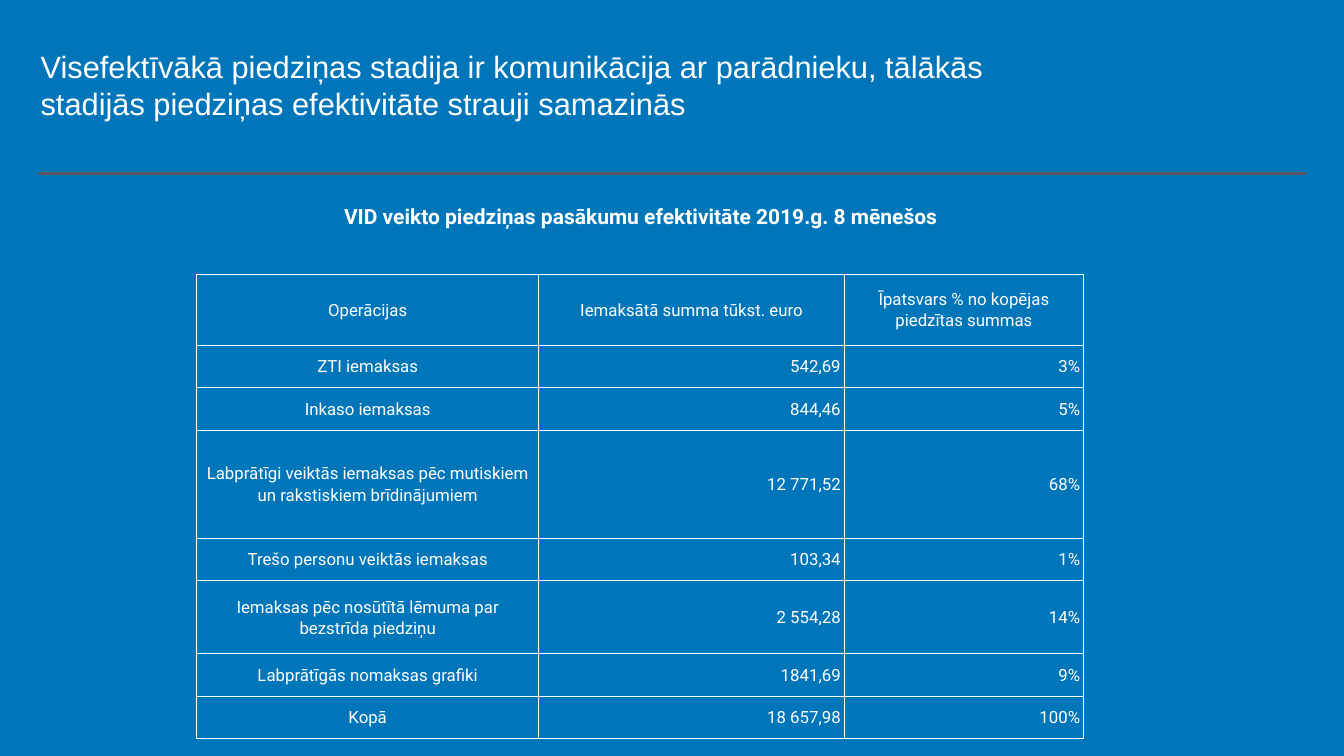
from dataclasses import dataclass

from lxml import etree
from pptx import Presentation
from pptx.dml.color import RGBColor
from pptx.enum.shapes import MSO_CONNECTOR
from pptx.enum.text import MSO_ANCHOR, PP_ALIGN
from pptx.oxml.ns import qn
from pptx.util import Pt

LEFT, CENTER, RIGHT = PP_ALIGN.LEFT, PP_ALIGN.CENTER, PP_ALIGN.RIGHT
TOP, MIDDLE = MSO_ANCHOR.TOP, MSO_ANCHOR.MIDDLE
STRAIGHT = MSO_CONNECTOR.STRAIGHT


@dataclass(frozen=True)
class Theme:
    background: str = "0076BA"
    text: str = "FFFFFF"
    rule: str = "53585F"
    title_font: str = "Arial"
    body_font: str = "Roboto"
    title_size: float = 44
    heading_size: float = 30
    cell_size: float = 24
    rule_width: float = 4
    border_width: float = 1


@dataclass(frozen=True)
class Label:
    text: str
    left: float
    top: float
    width: float
    height: float
    font: str
    size: float
    bold: bool
    align: PP_ALIGN
    anchor: MSO_ANCHOR


@dataclass(frozen=True)
class Row:
    operation: str
    amount: str
    share: str
    height: float = 60.5


THEME = Theme()

LABELS = [
    Label("Visefektīvākā piedziņas stadija ir komunikācija ar parādnieku, "
          "tālākās stadijās piedziņas efektivitāte strauji samazinās",
          54, 64, 1483, 114.5, THEME.title_font, THEME.title_size, False, LEFT, MIDDLE),
    Label("VID veikto piedziņas pasākumu efektivitāte 2019.g. 8 mēnešos",
          293.8, 287.3, 1243.4, 80.6, THEME.body_font, THEME.heading_size, True, CENTER, TOP),
]

COLUMN_WIDTHS = [488.9, 436.3, 342]
ROWS = [
    Row("Operācijas", "Iemaksātā summa tūkst. euro",
        "Īpatsvars % no kopējas piedzītas summas", 100.8),
    Row("ZTI iemaksas", "542,69", "3%"),
    Row("Inkaso iemaksas", "844,46", "5%"),
    Row("Labprātīgi veiktās iemaksas pēc mutiskiem un rakstiskiem brīdinājumiem",
        "12 771,52", "68%", 154.8),
    Row("Trešo personu veiktās iemaksas", "103,34", "1%"),
    Row("Iemaksas pēc nosūtītā lēmuma par bezstrīda piedziņu", "2 554,28", "14%", 104.4),
    Row("Labprātīgās nomaksas grafiki", "1841,69", "9%"),
    Row("Kopā", "18 657,98", "100%"),
]


def style_paragraph(p, font: str, size: float, bold: bool, align: PP_ALIGN) -> None:
    p.alignment = align
    for r in p.runs:
        r.font.name = font
        r.font.size = Pt(size)
        r.font.bold = bold
        r.font.color.rgb = RGBColor.from_string(THEME.text)


def add_label(s, label: Label) -> None:
    sp = s.shapes.add_textbox(Pt(label.left), Pt(label.top), Pt(label.width), Pt(label.height))
    tf = sp.text_frame
    tf.word_wrap = True
    tf.vertical_anchor = label.anchor
    tf.margin_left = tf.margin_right = tf.margin_top = tf.margin_bottom = Pt(4)
    tf.text = label.text
    style_paragraph(tf.paragraphs[0], label.font, label.size, label.bold, label.align)


def add_rule(s, left: float, right: float, y: float) -> None:
    line = s.shapes.add_connector(STRAIGHT, Pt(left), Pt(y), Pt(right), Pt(y))
    line.line.color.rgb = RGBColor.from_string(THEME.rule)
    line.line.width = Pt(THEME.rule_width)
    etree.SubElement(line._element.spPr, qn("a:effectLst"))


def add_borders(cell) -> None:
    props = cell._tc.get_or_add_tcPr()
    for i, side in enumerate(("a:lnL", "a:lnR", "a:lnT", "a:lnB")):
        border = etree.Element(qn(side), w=str(Pt(THEME.border_width)))
        fill = etree.SubElement(border, qn("a:solidFill"))
        etree.SubElement(fill, qn("a:srgbClr"), val=THEME.text)
        props.insert(i, border)


def fill_cell(cell, text: str, align: PP_ALIGN) -> None:
    cell.fill.background()
    cell.vertical_anchor = MIDDLE
    cell.margin_left = cell.margin_right = Pt(5)
    cell.margin_top = cell.margin_bottom = Pt(0)
    cell.text = text
    p = cell.text_frame.paragraphs[0]
    p.line_spacing = 1.07
    p.space_after = Pt(8)
    style_paragraph(p, THEME.body_font, THEME.cell_size, False, align)
    add_borders(cell)


def add_results_table(s, left: float, top: float) -> None:
    width, height = sum(COLUMN_WIDTHS), sum(row.height for row in ROWS)
    table = s.shapes.add_table(len(ROWS), len(COLUMN_WIDTHS), Pt(left), Pt(top),
                               Pt(width), Pt(height)).table
    table.first_row = table.horz_banding = False
    for column, column_width in zip(table.columns, COLUMN_WIDTHS):
        column.width = Pt(column_width)
    for i, row in enumerate(ROWS):
        table.rows[i].height = Pt(row.height)
        for j, text in enumerate((row.operation, row.amount, row.share)):
            # Header and operation names are centred, figures are right-aligned
            fill_cell(table.cell(i, j), text, CENTER if i == 0 or j == 0 else RIGHT)


def main() -> None:
    # Slide
    prs = Presentation()
    prs.slide_width, prs.slide_height = Pt(1920), Pt(1080)
    s = prs.slides.add_slide(prs.slide_layouts[6])
    s.background.fill.solid()
    s.background.fill.fore_color.rgb = RGBColor.from_string(THEME.background)

    # Title, rule, table and its heading
    for label in LABELS:
        add_label(s, label)
    add_rule(s, 54, 1865.5, 248.4)
    add_results_table(s, 280.8, 392.4)

    prs.save("out.pptx")


if __name__ == "__main__":
    main()
